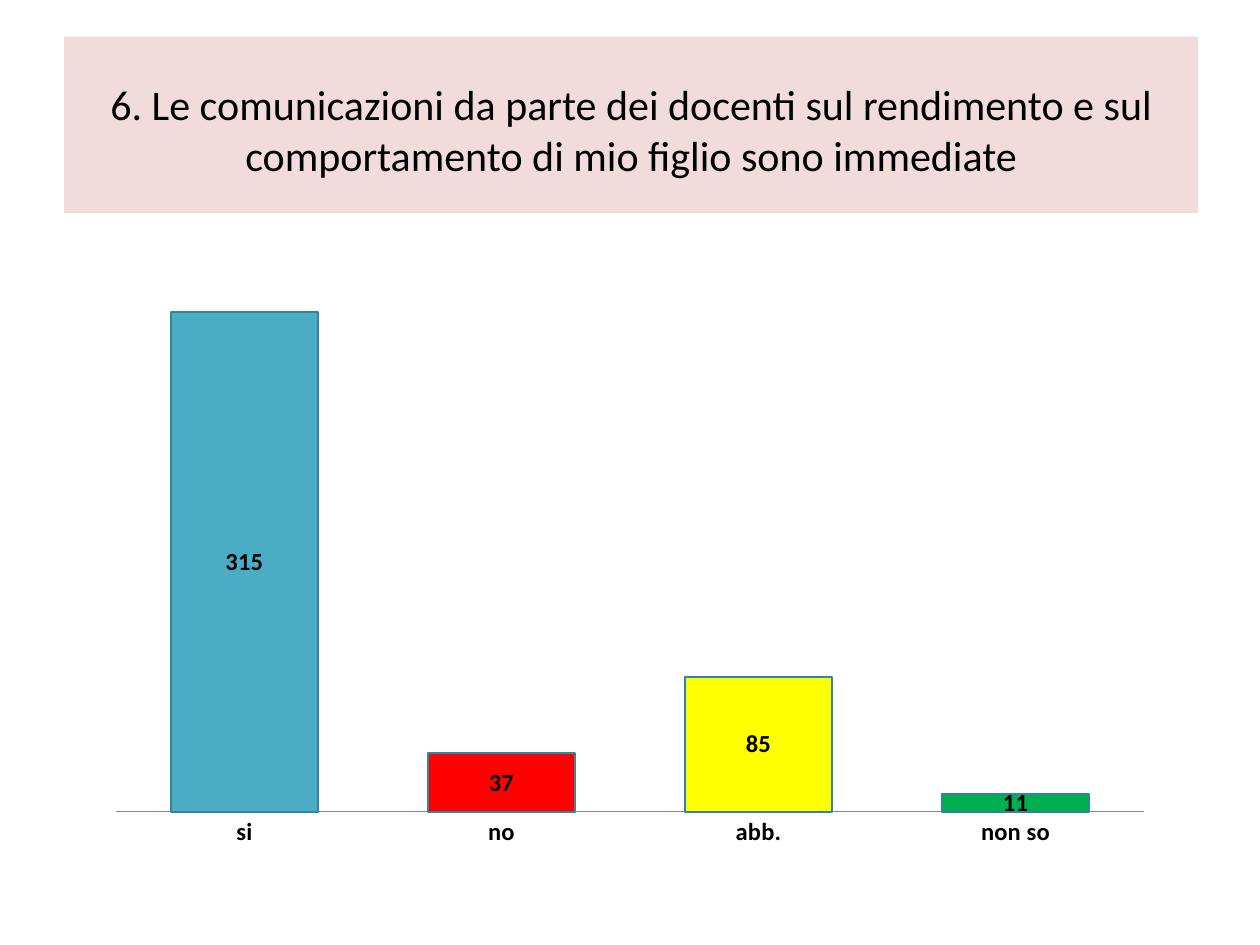
from pptx import Presentation
from pptx.chart.data import CategoryChartData
from pptx.dml.color import RGBColor
from pptx.enum.chart import XL_CHART_TYPE as ChartType, XL_LABEL_POSITION as LabelPos
from pptx.enum.chart import XL_TICK_MARK as TickMark
from pptx.enum.text import MSO_ANCHOR as Anchor, PP_ALIGN as Align
from pptx.util import Inches, Pt

QUESTION = ("6. Le comunicazioni da parte dei docenti sul rendimento e sul "
            "comportamento di mio figlio sono immediate")
ANSWERS = [("si", 315, "teal"), ("no", 37, "red"),
           ("abb.", 85, "yellow"), ("non so", 11, "green")]
COLORS = {"teal": "4BACC6", "red": "FF0000", "yellow": "FFFF00",
          "green": "00B050", "outline": "31859C", "axis": "868686",
          "banner": "F2DCDB", "text": "000000"}
FONT = "Calibri"
BANNER_BOX = (0.51, 0.29, 9, 1.4)
CHART_BOX = (0.75, 1.94, 8.5, 4.88)


def color(name):
    return RGBColor.from_string(COLORS[name])


def style(font, size, bold=False):
    font.name, font.size, font.bold = FONT, Pt(size), bold
    font.color.rgb = color("text")


def write(shape, text, size, align=Align.CENTER, anchor=Anchor.MIDDLE, top=0.05):
    frame = shape.text_frame
    frame.word_wrap = True
    frame.vertical_anchor = anchor
    frame.margin_top = Inches(top)
    frame.text = text
    paragraph = frame.paragraphs[0]
    paragraph.alignment = align
    style(paragraph.runs[0].font, size)


def add_answers(slide):
    labels, counts, fills = zip(*ANSWERS)
    data = CategoryChartData()
    data.categories = labels
    data.add_series("Series 1", counts)
    chart = slide.shapes.add_chart(
        ChartType.COLUMN_STACKED, *map(Inches, CHART_BOX), data).chart
    chart.has_legend = chart.has_title = False
    style(chart.font, 10)

    counts_axis = chart.value_axis
    counts_axis.visible = counts_axis.has_major_gridlines = False
    counts_axis.minimum_scale, counts_axis.maximum_scale = 0, 350

    answers_axis = chart.category_axis
    answers_axis.major_tick_mark = TickMark.NONE
    answers_axis.format.line.color.rgb = color("axis")
    style(answers_axis.tick_labels.font, 14, bold=True)

    plot = chart.plots[0]
    plot.gap_width, plot.overlap = 75, 100
    plot.vary_by_categories = False
    plot.has_data_labels = True
    plot.data_labels.show_value = True
    plot.data_labels.position = LabelPos.CENTER
    style(plot.data_labels.font, 14, bold=True)

    for index, fill in enumerate(fills):
        column = plot.series[0].points[index].format
        column.fill.solid()
        column.fill.fore_color.rgb = color(fill)
        column.line.color.rgb = color("outline")
        column.line.width = Pt(1)


def main():
    deck = Presentation()
    deck.slide_width, deck.slide_height = Inches(10), Inches(7.5)
    slide = deck.slides.add_slide(deck.slide_layouts[5])
    banner = slide.shapes.title
    banner.left, banner.top, banner.width, banner.height = map(Inches, BANNER_BOX)
    banner.fill.solid()
    banner.fill.fore_color.rgb = color("banner")
    write(banner, QUESTION, 24, top=0.12)
    add_answers(slide)
    deck.save("out.pptx")


if __name__ == "__main__":
    main()
